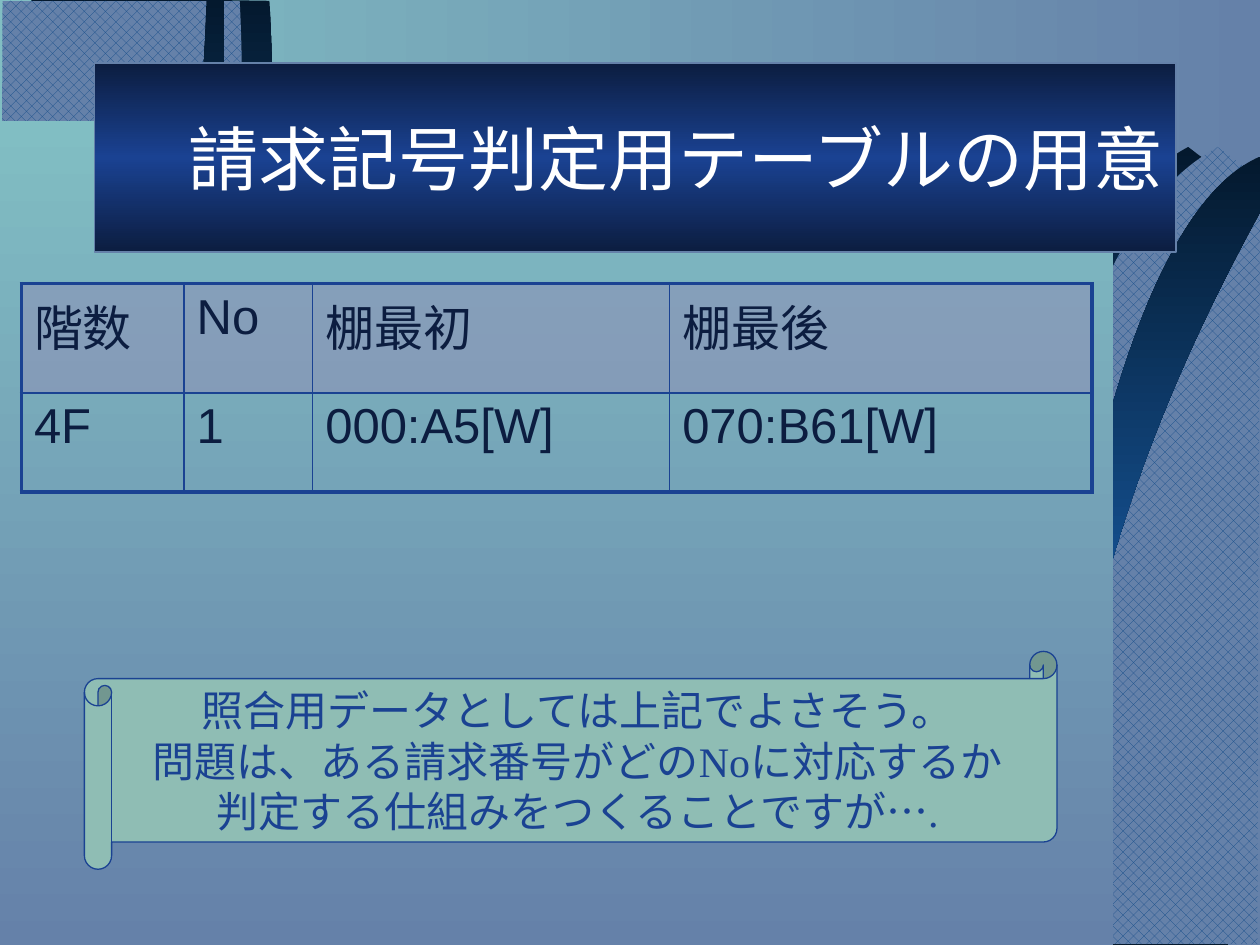
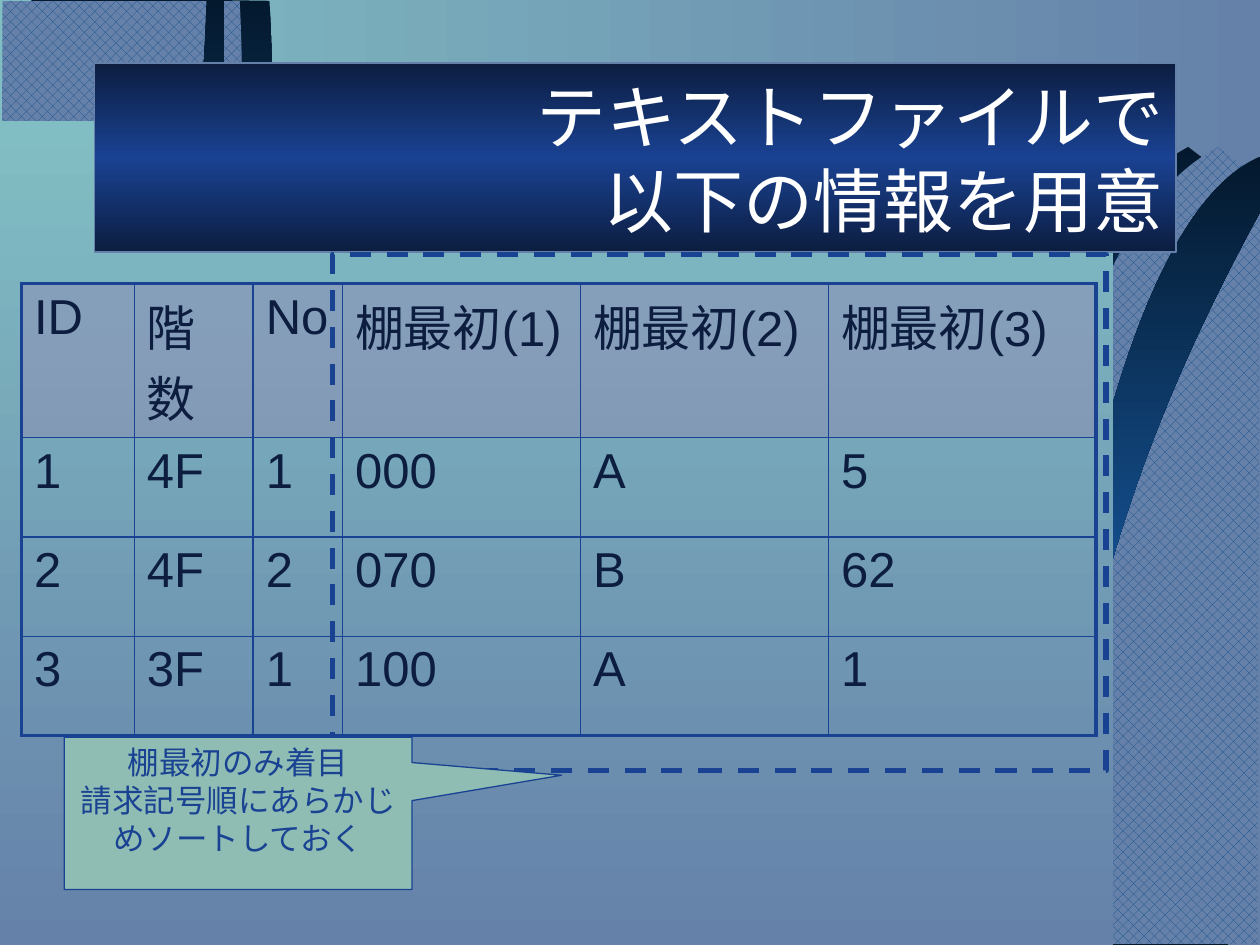
from itertools import islice
from lxml.etree import SubElement
from pptx import Presentation
from pptx.dml.color import RGBColor
from pptx.enum.dml import MSO_LINE, MSO_PATTERN
from pptx.enum.shapes import MSO_SHAPE as Preset
from pptx.enum.text import MSO_ANCHOR as Anchor, PP_ALIGN as Align
from pptx.oxml.ns import qn
from pptx.util import Pt

COLORS = {
    "aqua": "81BEC3", "slate": "6581A9", "deep": "04192E", "ocean": "134C89",
    "navy": "0C1D40", "royal": "1A4292", "lilac": "908DB7", "sage": "8FBDB4",
    "white": "FFFFFF",
}
SERIF, SANS = "Times New Roman", "Arial"
SLIDE_BOX = (0, 0, 720, 540)
TITLE_BOX = (54, 36, 618, 108)
PANEL_BOX = (0, 69, 636, 472.5)
TABLE_CORNER = (12.25, 162)

# Ribbon outlines at the right edge: a 2-tuple is a corner, a 6-tuple a curve
RIBBONS = [
    ("shade", [(679, 84), (558, 149, 561.5, 463, 566, 539.5),
               (702, 541.5), (702.5, 102)]),
    ("weave", [(696, 84), (575.5, 149, 579, 463, 583, 539.5),
               (718.5, 539.5), (720, 102)]),
    ("shade", [(592, 539.5), (587, 477.5, 621.5, 132, 720, 89.5),
               (720, 121.5), (658, 234.5, 605.5, 368.5, 602, 540.5)]),
]


def rgb(name):
    return RGBColor.from_string(COLORS[name])


def pts(box):
    return [Pt(length) for length in box]


def fill_gradient(owner, fill, names, angle):
    """Spread the named colours evenly; the angle runs clockwise."""
    fill.gradient()
    fill.gradient_angle = -angle % 360
    stops = owner.element.find(".//" + qn("a:gsLst"))
    for stop in list(stops):
        stops.remove(stop)
    for i, name in enumerate(names):
        position = str(100000 * i // (len(names) - 1))
        stop = SubElement(stops, qn("a:gs"), pos=position)
        SubElement(stop, qn("a:srgbClr"), val=COLORS[name])


def style_runs(paragraph, size, font, color, align):
    paragraph.alignment = align
    for run in paragraph.runs:
        run.font.size = Pt(size)
        run.font.name = SANS if run.text == "…" else font
        run.font.color.rgb = rgb(color)


def add_plain_shape(slide, preset, box, line_width=None):
    shape = slide.shapes.add_shape(preset, *pts(box))
    shape.shadow.inherit = False
    if line_width is None:
        shape.line.fill.background()
    else:
        shape.line.color.rgb = rgb("royal")
        shape.line.width = Pt(line_width)
    return shape


# Shared backdrop
def bend_curves(freeform, outline):
    """Join the three line segments that stand for each curve into one Bézier."""
    contour = freeform.element.find(".//" + qn("a:path"))
    segments = iter(contour.findall(qn("a:lnTo")))
    for step in outline[1:]:
        first, *others = islice(segments, len(step) // 2)
        if others:
            curve = SubElement(contour, qn("a:cubicBezTo"))
            contour.replace(first, curve)
            for segment in (first, *others):
                curve.append(segment[0])
            for segment in others:
                contour.remove(segment)


def add_ribbon(slide, box, finish, outline, turned):
    left, top, width, height = box
    points = [step[i:i + 2] for step in outline for i in range(0, len(step), 2)]
    if turned:
        points = [(width - x, height - y) for x, y in points]
    corners = [(Pt(left + x), Pt(top + y)) for x, y in points]
    builder = slide.shapes.build_freeform(*corners[0])
    builder.add_line_segments(corners[1:], close=True)
    ribbon = builder.convert_to_shape()
    bend_curves(ribbon, outline)
    ribbon.shadow.inherit = False
    ribbon.line.fill.background()
    if finish == "shade":
        fill_gradient(ribbon, ribbon.fill, ["deep", "ocean", "deep"], 90)
    else:
        ribbon.fill.patterned()
        ribbon.fill.pattern = MSO_PATTERN.WEAVE
        ribbon.fill.fore_color.rgb = rgb("ocean")
        ribbon.fill.back_color.rgb = rgb("slate")
    return ribbon


def build_backdrop(layout, slide, box):
    """Draw the backdrop on a slide, then hand it to the layout all slides use."""
    fill_gradient(layout, layout.background.fill, ["aqua", "slate"], 0)
    backdrop = [add_ribbon(slide, box, finish, outline, turned)
                for turned in (False, True) for finish, outline in RIBBONS]
    panel = add_plain_shape(slide, Preset.RECTANGLE, PANEL_BOX)
    fill_gradient(panel, panel.fill, ["aqua", "slate"], 90)
    for position, part in enumerate(backdrop + [panel], start=2):
        layout.shapes.element.insert(position, part.element)


# Title band
def add_title(slide, box, wording):
    title = slide.shapes.title
    title.left, title.top, title.width, title.height = pts(box)
    fill_gradient(title, title.fill, ["navy", "royal", "navy"], 90)
    title.line.color.rgb = rgb("slate")
    title.line.width = Pt(0.75)
    title.text_frame.text = wording
    title.text_frame.vertical_anchor = Anchor.MIDDLE
    style_runs(title.text_frame.paragraphs[0], 40, SERIF, "white", Align.RIGHT)


# Shelf table
def set_borders(cell, outer_sides):
    properties = cell._tc.get_or_add_tcPr()
    for position, side in enumerate("LRTB"):
        width = Pt(2.25 if side in outer_sides else 1)
        border = SubElement(properties, qn("a:ln" + side), w=str(width))
        solid = SubElement(border, qn("a:solidFill"))
        SubElement(solid, qn("a:srgbClr"), val=COLORS["royal"])
        properties.insert(position, border)


def add_shelf_table(slide, corner, column_widths, records):
    row_heights = [62.5] + [56.75] * (len(records) - 1)
    box = (*corner, sum(column_widths), sum(row_heights))
    table = slide.shapes.add_table(len(records), len(column_widths), *pts(box)).table
    table.first_row = table.horz_banding = False
    for column, width in zip(table.columns, column_widths):
        column.width = Pt(width)
    for row, height in zip(table.rows, row_heights):
        row.height = Pt(height)
    last_row, last_column = len(records) - 1, len(column_widths) - 1
    for r, record in enumerate(records):
        for c, entry in enumerate(record):
            cell = table.cell(r, c)
            cell.text_frame.text = entry
            style_runs(cell.text_frame.paragraphs[0], 28, SANS, "navy", Align.LEFT)
            if r == 0:
                cell.fill.solid()
                cell.fill.fore_color.rgb = rgb("lilac")
                tint = cell._tc.tcPr.find(".//" + qn("a:srgbClr"))
                SubElement(tint, qn("a:alpha"), val="50000")
            else:
                cell.fill.background()
            edges = {"L": c == 0, "R": c == last_column,
                     "T": r == 0, "B": r == last_row}
            set_borders(cell, [side for side, outer in edges.items() if outer])


# Notes and markers
def add_note(slide, preset, box, lines, size, anchor, adjustments, wrap):
    note = add_plain_shape(slide, preset, box, 0.75)
    for i, value in enumerate(adjustments):
        note.adjustments[i] = value
    note.fill.solid()
    note.fill.fore_color.rgb = rgb("sage")
    frame = note.text_frame
    frame.word_wrap = wrap
    frame.vertical_anchor = anchor
    for i, line in enumerate(lines):
        paragraph = frame.add_paragraph() if i else frame.paragraphs[0]
        for piece in filter(None, line.partition("…")):
            paragraph.add_run().text = piece
        style_runs(paragraph, size, SERIF, "royal", Align.CENTER)


def add_dashed_frame(slide, box):
    frame = add_plain_shape(slide, Preset.RECTANGLE, box, 3)
    frame.fill.background()
    frame.line.dash_style = MSO_LINE.DASH


# Slides
def fill_lookup_slide(slide):
    add_title(slide, TITLE_BOX, "請求記号判定用テーブルの用意")
    add_shelf_table(slide, TABLE_CORNER, [93, 73.5, 204, 241.25], [
        ["階数", "No", "棚最初", "棚最後"],
        ["4F", "1", "000:A5[W]", "070:B61[W]"],
    ])
    add_note(slide, Preset.HORIZONTAL_SCROLL, (48.25, 372.25, 555.75, 124.5), [
        "照合用データとしては上記でよさそう。",
        "問題は、ある請求番号がどのNoに対応するか",
        "判定する仕組みをつくることですが….",
    ], 24, Anchor.MIDDLE, [0.125], False)


def fill_text_file_slide(slide):
    add_title(slide, TITLE_BOX, "テキストファイルで\v以下の情報を用意")
    add_shelf_table(slide, TABLE_CORNER, [64.5, 68, 51, 136, 141.75, 153], [
        ["ID", "階数", "No", "棚最初(1)", "棚最初(2)", "棚最初(3)"],
        ["1", "4F", "1", "000", "A", "5"],
        ["2", "4F", "2", "070", "B", "62"],
        ["3", "3F", "1", "100", "A", "1"],
    ])
    add_dashed_frame(slide, (190, 145.5, 442, 295))
    add_note(slide, Preset.RECTANGULAR_CALLOUT, (36.75, 421.25, 198.75, 87), [
        "棚最初のみ着目",
        "請求記号順にあらかじめソートしておく",
    ], 18, Anchor.TOP, [0.93, -0.25], True)


def main():
    deck = Presentation()
    deck.slide_width, deck.slide_height = pts(SLIDE_BOX[2:])
    layout = deck.slide_layouts.get_by_name("Title Only")
    lookup, text_file = [deck.slides.add_slide(layout) for _ in range(2)]
    build_backdrop(layout, lookup, SLIDE_BOX)
    fill_lookup_slide(lookup)
    fill_text_file_slide(text_file)
    deck.save("out.pptx")


if __name__ == "__main__":
    main()
